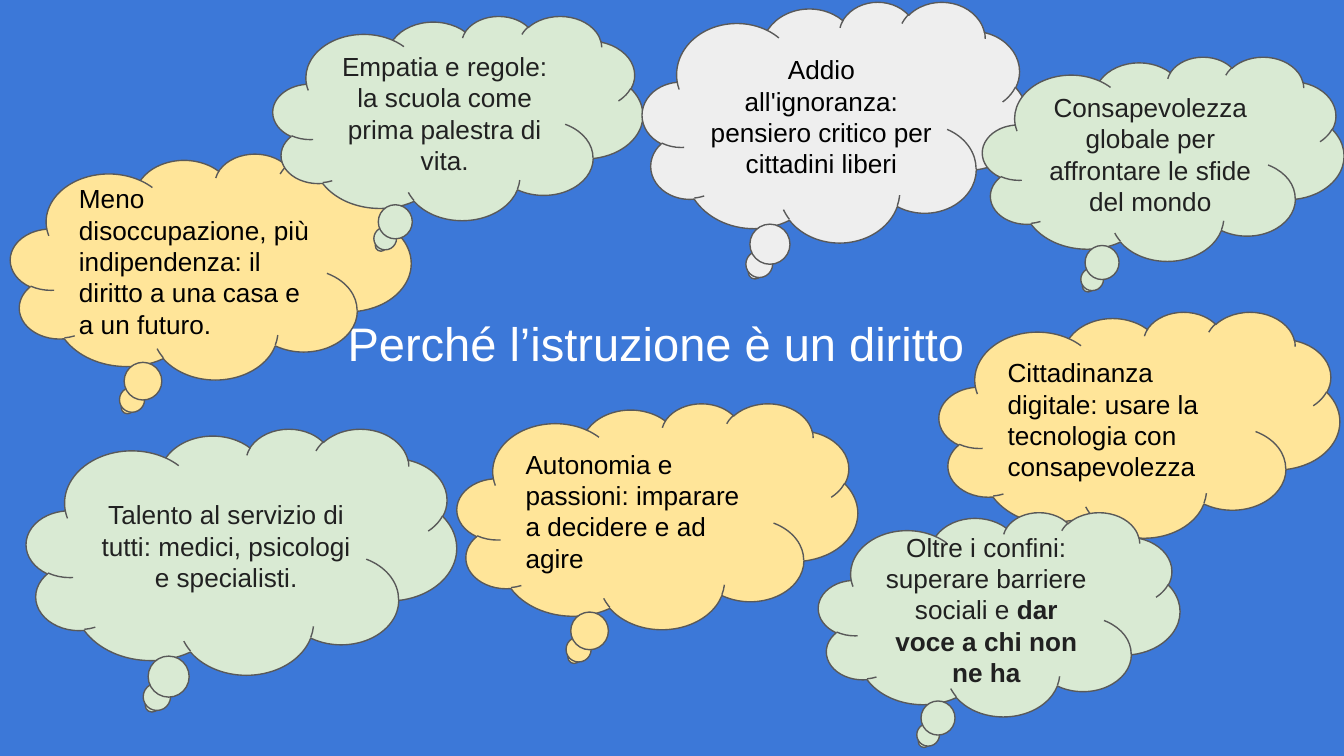
from dataclasses import dataclass

from pptx import Presentation
from pptx.dml.color import RGBColor
from pptx.enum.shapes import MSO_SHAPE
from pptx.enum.text import MSO_ANCHOR, PP_ALIGN
from pptx.slide import Slide
from pptx.text.text import TextFrame
from pptx.util import Cm, Pt

BLUE = RGBColor(0x3C, 0x78, 0xD8)
YELLOW = RGBColor(0xFF, 0xE5, 0x99)
GREEN = RGBColor(0xD9, 0xEA, 0xD3)
GREY = RGBColor(0xEE, 0xEE, 0xEE)
OUTLINE = RGBColor(0x59, 0x59, 0x59)
BLACK = RGBColor(0x00, 0x00, 0x00)
CHARCOAL = RGBColor(0x21, 0x21, 0x21)
WHITE = RGBColor(0xFF, 0xFF, 0xFF)

FONT = "Arial"
INSET = Cm(0.25)
TAIL = (-0.208, 0.625)


@dataclass(frozen=True)
class Style:
    fill: RGBColor
    ink: RGBColor
    align: PP_ALIGN


@dataclass(frozen=True)
class Thought:
    text: str
    left: float
    top: float
    width: float
    height: float
    style: Style
    emphasis: str = ""


AUTONOMY = Style(YELLOW, BLACK, PP_ALIGN.LEFT)
COMMUNITY = Style(GREEN, CHARCOAL, PP_ALIGN.CENTER)
CRITICAL = Style(GREY, BLACK, PP_ALIGN.CENTER)

THOUGHTS = [
    Thought("Meno disoccupazione, più indipendenza: il diritto a una casa e a un futuro.",
            0.2, 2.9, 7.57, 4.27, AUTONOMY),
    Thought("Empatia e regole: la scuola come prima palestra di vita.",
            5.16, 0.3, 6.99, 3.86, COMMUNITY),
    Thought("Cittadinanza digitale: usare la tecnologia con consapevolezza",
            17.75, 5.89, 7.57, 4.27, AUTONOMY),
    Thought("Addio all'ignoranza: pensiero critico per cittadini liberi",
            12.14, 0.03, 7.29, 4.55, CRITICAL),
    Thought("Talento al servizio di tutti: medici, psicologi e specialisti.",
            0.5, 8.1, 8.13, 4.65, COMMUNITY),
    Thought("Autonomia e passioni: imparare a decidere e ad agire",
            8.64, 7.62, 7.57, 4.27, AUTONOMY),
    Thought("Oltre i confini: superare barriere sociali e ",
            15.47, 9.68, 6.83, 3.86, COMMUNITY, "dar voce a chi non ne ha"),
    Thought("Consapevolezza globale per affrontare le sfide del mondo",
            18.57, 1.07, 6.83, 3.86, COMMUNITY),
]


def write(frame: TextFrame, text: str, size: float, ink: RGBColor,
          align: PP_ALIGN, anchor: MSO_ANCHOR, emphasis: str = "") -> None:
    frame.word_wrap = True
    frame.vertical_anchor = anchor
    frame.margin_left = frame.margin_right = INSET
    frame.margin_top = frame.margin_bottom = INSET
    paragraph = frame.paragraphs[0]
    paragraph.alignment = align
    paragraph.font.name = FONT
    paragraph.font.size = Pt(size)
    paragraph.font.color.rgb = ink
    paragraph.add_run().text = text
    if emphasis:
        strong = paragraph.add_run()
        strong.text = emphasis
        strong.font.bold = True


def draw_title(slide: Slide, text: str) -> None:
    title = slide.shapes.add_textbox(Cm(6.32), Cm(5.69), Cm(12.75), Cm(1.63))
    write(title.text_frame, text, 25.2, WHITE, PP_ALIGN.LEFT, MSO_ANCHOR.TOP)


def draw_thought(slide: Slide, thought: Thought) -> None:
    cloud = slide.shapes.add_shape(
        MSO_SHAPE.CLOUD_CALLOUT,
        Cm(thought.left), Cm(thought.top), Cm(thought.width), Cm(thought.height))
    cloud.adjustments[0], cloud.adjustments[1] = TAIL
    cloud.shadow.inherit = False
    cloud.fill.solid()
    cloud.fill.fore_color.rgb = thought.style.fill
    cloud.line.color.rgb = OUTLINE
    cloud.line.width = Pt(0.75)
    write(cloud.text_frame, thought.text, 14, thought.style.ink,
          thought.style.align, MSO_ANCHOR.MIDDLE, thought.emphasis)


def main() -> None:
    presentation = Presentation()
    presentation.slide_width = Cm(25.4)
    presentation.slide_height = Cm(14.29)
    slide = presentation.slides.add_slide(presentation.slide_layouts[6])
    slide.background.fill.solid()
    slide.background.fill.fore_color.rgb = BLUE

    draw_title(slide, "Perché l’istruzione è un diritto")
    for thought in THOUGHTS:
        draw_thought(slide, thought)

    presentation.save("out.pptx")


if __name__ == "__main__":
    main()
